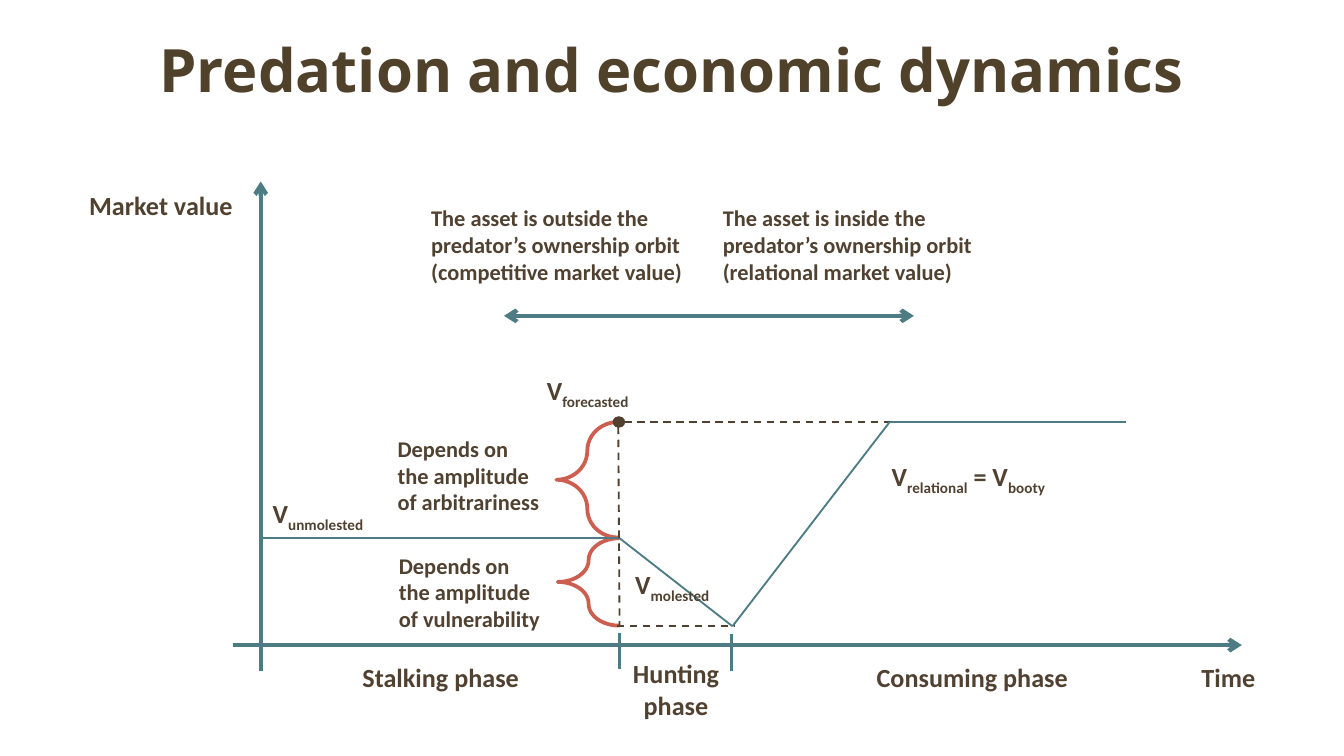
from lxml import etree
from pptx import Presentation
from pptx import util as u
from pptx.dml.color import RGBColor
from pptx.enum import dml, shapes, text
from pptx.oxml import ns

PX = 4572
BROWN = RGBColor(0x50, 0x41, 0x31)
TITLE_BROWN = RGBColor(0x50, 0x41, 0x2B)
TEAL = RGBColor(0x4D, 0x7C, 0x85)
RED = RGBColor(0xCD, 0x5F, 0x50)
LEFT, CENTER, RIGHT = text.PP_ALIGN.LEFT, text.PP_ALIGN.CENTER, text.PP_ALIGN.RIGHT
TOP, MIDDLE = text.MSO_ANCHOR.TOP, text.MSO_ANCHOR.MIDDLE

ORIGIN_X, TIME_Y = 388, 960
HUNT_X, CONSUME_X, BOOTY_X = 922, 1090, 1324
FORECAST_Y, UNMOLESTED_Y, MOLESTED_Y = 628, 801, 932
ORBIT_X, ORBIT_Y = 1056, 470


def px(*lengths):
    return [u.Emu(length * PX) for length in lengths]


def style_font(paragraph, name, size, color):
    font = paragraph.font
    font.name, font.size, font.bold = name, u.Pt(size), True
    font.color.rgb = color


def add_title(slide, wording):
    title = slide.shapes.title
    title.left, title.top, title.width, title.height = px(24, 39, 1952, 176)
    frame = title.text_frame
    frame.vertical_anchor = TOP
    frame.text = wording
    frame.paragraphs[0].alignment = CENTER
    style_font(frame.paragraphs[0], "Open Sans", 32, TITLE_BROWN)


def add_label(slide, box, parts, size=14, align=LEFT, anchor=TOP, spacing=1.15, inset=None):
    frame = slide.shapes.add_textbox(*px(*box)).text_frame
    frame.word_wrap = True
    frame.vertical_anchor = anchor
    if inset is not None:
        frame.margin_left = frame.margin_right = inset
        frame.margin_top = frame.margin_bottom = inset
    paragraph = frame.paragraphs[0]
    paragraph.alignment = align
    paragraph.line_spacing = spacing
    paragraph.space_after = u.Pt(10)
    style_font(paragraph, "Calibri", size, BROWN)
    for index, part in enumerate(parts):
        run = paragraph.add_run()
        run.text = part
        if index % 2:
            run.font._element.set("baseline", "-25000")


def add_note(slide, box, wording):
    add_label(slide, box, [wording], size=12, anchor=MIDDLE, spacing=1.0)


def add_line(slide, start, end, width, color=TEAL, dashed=False, head=None, tail=None):
    line = slide.shapes.add_connector(shapes.MSO_CONNECTOR.STRAIGHT, *px(*start, *end))
    line.line.color.rgb = color
    line.line.width = u.Pt(width)
    if dashed:
        line.line.dash_style = dml.MSO_LINE.DASH
    for tag, kind in (("a:headEnd", head), ("a:tailEnd", tail)):
        if kind:
            etree.SubElement(line.line._get_or_add_ln(), ns.qn(tag), type=kind)
    etree.SubElement(line._element.spPr, ns.qn("a:effectLst"))


def add_brace(slide, box, curve):
    brace = slide.shapes.add_shape(shapes.MSO_SHAPE.LEFT_BRACE, *px(*box))
    brace.adjustments[0] = curve
    brace.shadow.inherit = False
    brace.fill.background()
    brace.line.color.rgb = RED
    brace.line.width = u.Pt(2)


def main():
    deck = Presentation()
    deck.slide_width, deck.slide_height = px(2000, 1125)
    slide = deck.slides.add_slide(deck.slide_layouts[5])
    add_title(slide, "Predation and economic dynamics")

    add_brace(slide, (828, FORECAST_Y, 92, 172), 0.465)
    add_brace(slide, (830, UNMOLESTED_Y, 92, 130), 0.351)

    forecast, strike = (HUNT_X, FORECAST_Y), (HUNT_X, UNMOLESTED_Y)
    trough, booty = (CONSUME_X, MOLESTED_Y), (BOOTY_X, FORECAST_Y)
    add_line(slide, (918, MOLESTED_Y), (1094, MOLESTED_Y), 1, BROWN, dashed=True)
    add_line(slide, (ORIGIN_X, UNMOLESTED_Y), strike, 1.25)
    add_line(slide, strike, trough, 1)
    add_line(slide, forecast, booty, 1, BROWN, dashed=True, head="oval")
    add_line(slide, (ORIGIN_X, 270), (ORIGIN_X, 998), 2.25, head="arrow")
    add_line(slide, (1848, TIME_Y), (346, TIME_Y), 2.25, head="arrow")
    add_line(slide, trough, booty, 1)
    add_line(slide, booty, (1676, FORECAST_Y), 1)
    add_line(slide, (HUNT_X, 942), (HUNT_X, 995), 1.5)
    add_line(slide, (1088, 944), (1088, 998), 1.5)
    for orbit_end in (750, 1360):
        add_line(slide, (ORBIT_X, ORBIT_Y), (orbit_end, ORBIT_Y), 2.25, tail="arrow")
    add_line(slide, (920, FORECAST_Y), (HUNT_X, MOLESTED_Y), 1, BROWN, dashed=True, head="oval")

    add_label(slide, (110, 264, 256, 74), ["Market value"], align=RIGHT, anchor=MIDDLE)
    for left, width, phase in ((482, 348, "Stalking phase"),
                               (1256, 382, "Consuming phase"),
                               (1766, 124, "Time")):
        add_label(slide, (left, 968, width, 94), [phase], align=CENTER)
    add_label(slide, (914, 969, 184, 118), ["Hunting phase"], align=CENTER, spacing=1.0)

    add_label(slide, (386, 723, 190, 112), ["V", "unmolested"])
    add_label(slide, (794, 540, 398, 112), ["V", "forecasted"])
    add_label(slide, (1307, 668, 330, 112), ["V", "relational", " = V", "booty"])
    add_label(slide, (945, 838, 130, 56), ["V", "molested"], inset=0)

    add_note(slide, (572, 612, 256, 190), "Depends on the amplitude of arbitrariness")
    add_note(slide, (574, 801, 254, 160), "Depends on the amplitude of vulnerability")
    add_note(slide, (622, 286, 434, 156),
             "The asset is outside the predator’s ownership orbit (competitive market value)")
    add_note(slide, (ORBIT_X, 286, 448, 156),
             "The asset is inside the predator’s ownership orbit (relational market value)")

    deck.save("out.pptx")


if __name__ == "__main__":
    main()
